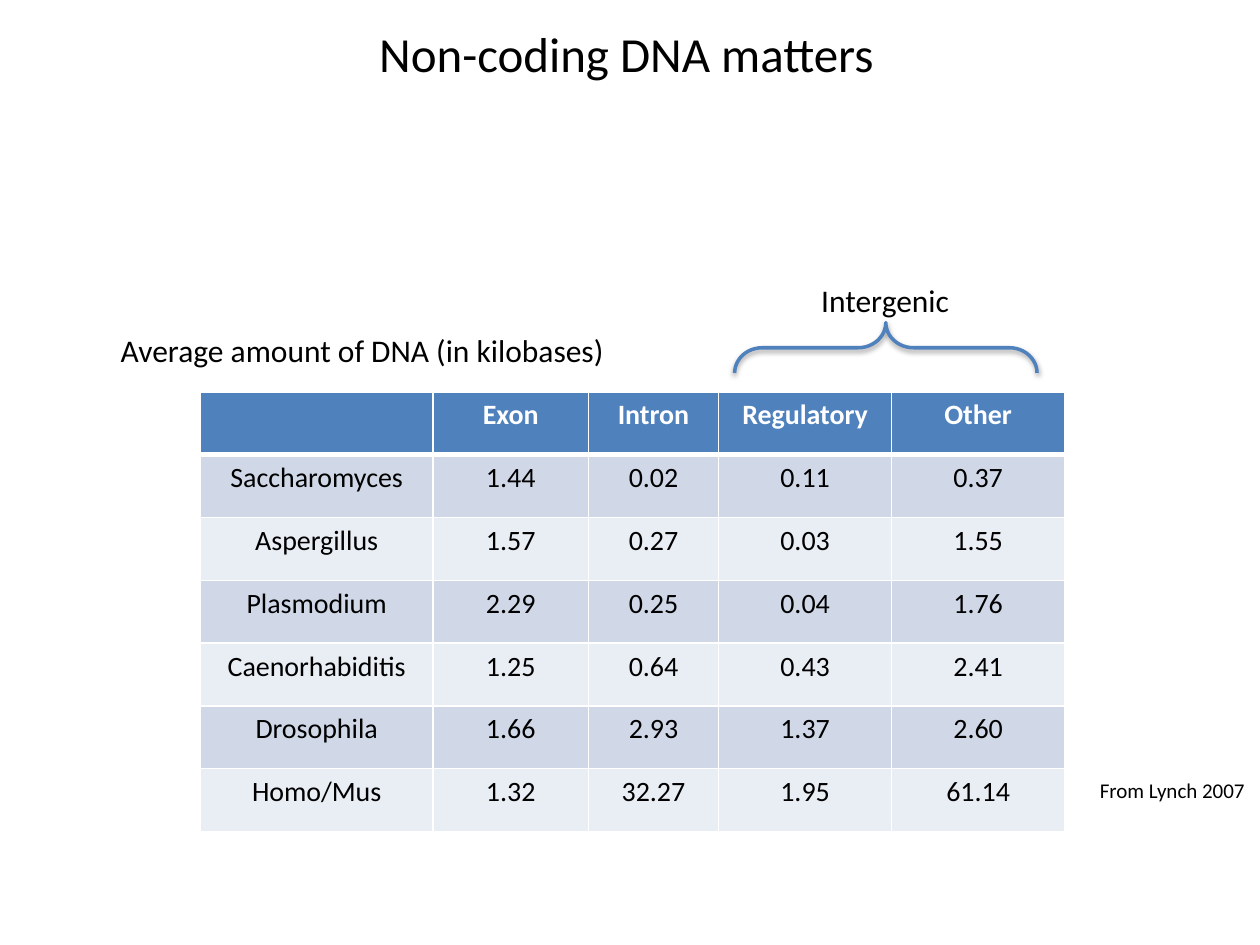
from lxml.etree import SubElement
from pptx import Presentation
from pptx.dml.color import RGBColor
from pptx.enum.shapes import MSO_SHAPE
from pptx.enum.text import MSO_ANCHOR, PP_ALIGN
from pptx.oxml.ns import qn
from pptx.util import Pt

BLACK = RGBColor(0x00, 0x00, 0x00)
WHITE = RGBColor(0xFF, 0xFF, 0xFF)
BLUE = RGBColor(0x4F, 0x81, 0xBD)
BAND_DARK = RGBColor(0xD0, 0xD8, 0xE8)
BAND_LIGHT = RGBColor(0xE9, 0xED, 0xF4)

COL_WIDTHS = [133, 88.8, 74.4, 98.9, 98.9]
ROW_HEIGHT = 35.9
ROWS = [
    ["", "Exon", "Intron", "Regulatory", "Other"],
    ["Saccharomyces", "1.44", "0.02", "0.11", "0.37"],
    ["Aspergillus", "1.57", "0.27", "0.03", "1.55"],
    ["Plasmodium", "2.29", "0.25", "0.04", "1.76"],
    ["Caenorhabiditis", "1.25", "0.64", "0.43", "2.41"],
    ["Drosophila", "1.66", "2.93", "1.37", "2.60"],
    ["Homo/Mus", "1.32", "32.27", "1.95", "61.14"],
]


def set_attrs(obj, values):
    """Set each attribute of obj from a dict of values."""
    for name, value in values.items():
        setattr(obj, name, value)


def write(tf, text, size, color=BLACK, bold=False, align=PP_ALIGN.LEFT):
    """Write one formatted paragraph into a text frame."""
    p = tf.paragraphs[0]
    p.alignment = align
    r = p.add_run()
    r.text = text
    set_attrs(r.font, {"name": "Calibri", "size": Pt(size), "bold": bold})
    r.font.color.rgb = color


def place_text(sp, text, size, left, top, width, height):
    """Position a shape and fill it with one unwrapped line."""
    set_attrs(sp, {"left": Pt(left), "top": Pt(top),
                   "width": Pt(width), "height": Pt(height)})
    set_attrs(sp.text_frame, {"word_wrap": False,
                              "vertical_anchor": MSO_ANCHOR.TOP})
    write(sp.text_frame, text, size)


def add_label(s, *args):
    """Add a text box holding one line."""
    place_text(s.shapes.add_textbox(0, 0, 0, 0), *args)


def add_border(cell, side, width):
    """Draw a white border on one side of a cell."""
    ln = SubElement(cell._tc.get_or_add_tcPr(), qn(f"a:ln{side}"),
                    w=str(Pt(width)))
    fill = SubElement(ln, qn("a:solidFill"))
    SubElement(fill, qn("a:srgbClr"), val=str(WHITE))


def format_cell(cell, text, row):
    """Fill, border and write a header or body cell."""
    header = row == 0
    for side in "LRTB":
        thick = (header and side == "B") or (row == 1 and side == "T")
        add_border(cell, side, 3 if thick else 1)
    cell.fill.solid()
    band = BAND_DARK if row % 2 else BAND_LIGHT
    cell.fill.fore_color.rgb = BLUE if header else band
    write(cell.text_frame, text, 16, WHITE if header else BLACK,
          header, PP_ALIGN.CENTER)


def add_dna_table(s, left, top):
    """Add the table of DNA amounts per genus."""
    table = s.shapes.add_table(len(ROWS), len(COL_WIDTHS), Pt(left), Pt(top),
                               Pt(sum(COL_WIDTHS)),
                               Pt(ROW_HEIGHT * len(ROWS))).table
    for col, width in zip(table.columns, COL_WIDTHS):
        col.width = Pt(width)
    for i, values in enumerate(ROWS):
        table.rows[i].height = Pt(ROW_HEIGHT)
        for j, text in enumerate(values):
            format_cell(table.cell(i, j), text, i)


def add_brace(s, left, top, width, height):
    """Add an upward brace with a soft shadow."""
    sp = s.shapes.add_shape(MSO_SHAPE.RIGHT_BRACE, Pt(left), Pt(top),
                            Pt(width), Pt(height))
    sp.rotation = 270
    sp.adjustments[0] = 0.548
    sp.adjustments[1] = 0.5
    sp.fill.background()
    sp.line.color.rgb = BLUE
    sp.line.width = Pt(2)
    sp.shadow.inherit = False
    effects = sp._element.spPr.find(qn("a:effectLst"))
    shadow = SubElement(effects, qn("a:outerShdw"), blurRad=str(Pt(3.1)),
                        dist=str(Pt(1.6)), dir="5400000", rotWithShape="0")
    color = SubElement(shadow, qn("a:srgbClr"), val=str(BLACK))
    SubElement(color, qn("a:alpha"), val="38000")


def main():
    """Build the slide and save it."""
    prs = Presentation()
    set_attrs(prs, {"slide_width": Pt(720), "slide_height": Pt(540)})
    s = prs.slides.add_slide(prs.slide_layouts[5])
    place_text(s.shapes.title, "Non-coding DNA matters", 28,
               209.5, 10.1, 301.7, 41)
    add_label(s, "From Lynch 2007", 12, 621.4, 440.6, 98.6, 21.6)
    add_dna_table(s, 114.5, 223.9)
    add_label(s, "Intergenic", 18, 462.2, 157, 89.3, 28.8)
    add_brace(s, 491.8, 112.3, 28.8, 172.8)
    add_label(s, "Average amount of DNA (in kilobases)", 18,
              61.9, 185.8, 294.5, 28.8)
    prs.save("out.pptx")


if __name__ == "__main__":
    main()
